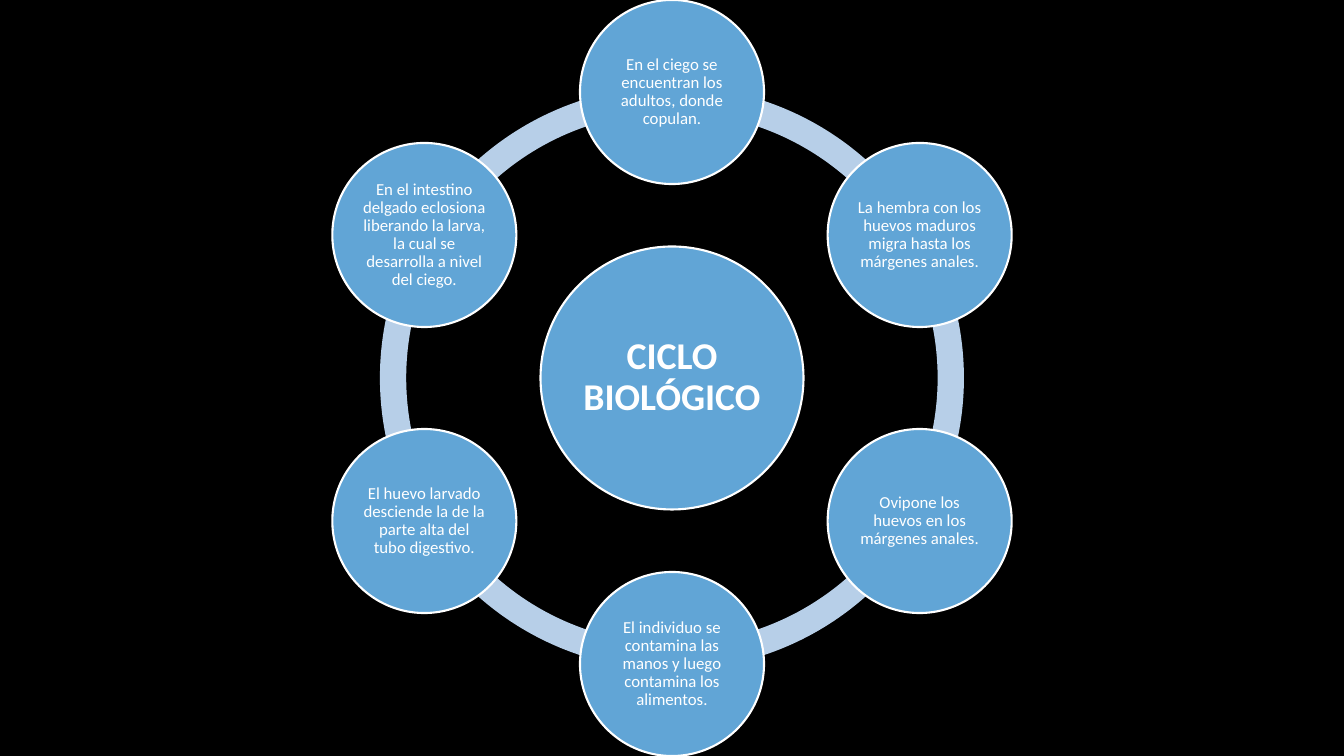
from math import cos, radians, sin

from pptx import Presentation
from pptx import util as u
from pptx.dml.color import RGBColor
from pptx.enum import shapes, text

PX = 914400 / 100.8
BLACK = RGBColor(0x00, 0x00, 0x00)
WHITE = RGBColor(0xFF, 0xFF, 0xFF)
BLUE = RGBColor(0x61, 0xA5, 0xD6)
PALE = RGBColor(0xB7, 0xCF, 0xE8)

TITLE = "CICLO BIOLÓGICO"
STEPS = [
    "En el ciego se encuentran los adultos, donde copulan.",
    "La hembra con los huevos maduros migra hasta los márgenes anales.",
    "Ovipone los huevos en los márgenes anales.",
    "El individuo se contamina las manos y luego contamina los alimentos.",
    "El huevo larvado desciende la de la parte alta del tubo digestivo.",
    "En el intestino delgado eclosiona liberando la larva, la cual se "
    "desarrolla a nivel del ciego.",
]


def px(n):
    return u.Emu(round(n * PX))


def add_round(slide, kind, x, y, size, color):
    left, top = x - size / 2, y - size / 2
    shape = slide.shapes.add_shape(kind, px(left), px(top), px(size), px(size))
    shape.shadow.inherit = False
    shape.fill.solid()
    shape.fill.fore_color.rgb = color
    return shape


def add_arc(slide, x, y, size, start, end):
    arc = add_round(slide, shapes.MSO_SHAPE.BLOCK_ARC, x, y, size, PALE)
    arc.line.fill.background()
    for i, value in enumerate((start % 360 * 0.6, end % 360 * 0.6, 0.045)):
        arc.adjustments[i] = value


def add_disc(slide, x, y, size, words, points, inset, bold=False):
    disc = add_round(slide, shapes.MSO_SHAPE.OVAL, x, y, size, BLUE)
    disc.line.color.rgb = WHITE
    disc.line.width = u.Pt(1.5)
    frame = disc.text_frame
    frame.text = words
    frame.word_wrap = True
    frame.vertical_anchor = text.MSO_ANCHOR.MIDDLE
    frame.margin_left = frame.margin_right = px(inset)
    frame.margin_top = frame.margin_bottom = px(inset)
    para = frame.paragraphs[0]
    para.alignment = text.PP_ALIGN.CENTER
    para.line_spacing = 0.9
    font = para.runs[0].font
    font.name = "Calibri"
    font.size = u.Pt(points)
    font.bold = bold
    font.color.rgb = WHITE


def add_cycle(slide, left, top, width, height):
    x, y = left + width / 2, top + height / 2
    node, ring, hub = 184, 584, 263
    radius = (height - node) / 2
    turn = 360 / len(STEPS)
    angles = [turn * i - 90 for i in range(len(STEPS))]
    for angle in angles:
        add_arc(slide, x, y, ring, angle, angle + turn)
    add_disc(slide, x, y, hub, TITLE, 27, 4, True)
    for angle, step in zip(angles, STEPS):
        a = radians(angle)
        add_disc(slide, x + radius * cos(a), y + radius * sin(a),
                 node, step, 12, 2)


def main():
    deck = Presentation()
    deck.slide_width, deck.slide_height = px(1344), px(756)
    slide = deck.slides.add_slide(deck.slide_layouts[6])
    slide.background.fill.solid()
    slide.background.fill.fore_color.rgb = BLACK
    add_cycle(slide, 332, 0, 680, 756)
    deck.save("out.pptx")


if __name__ == "__main__":
    main()
